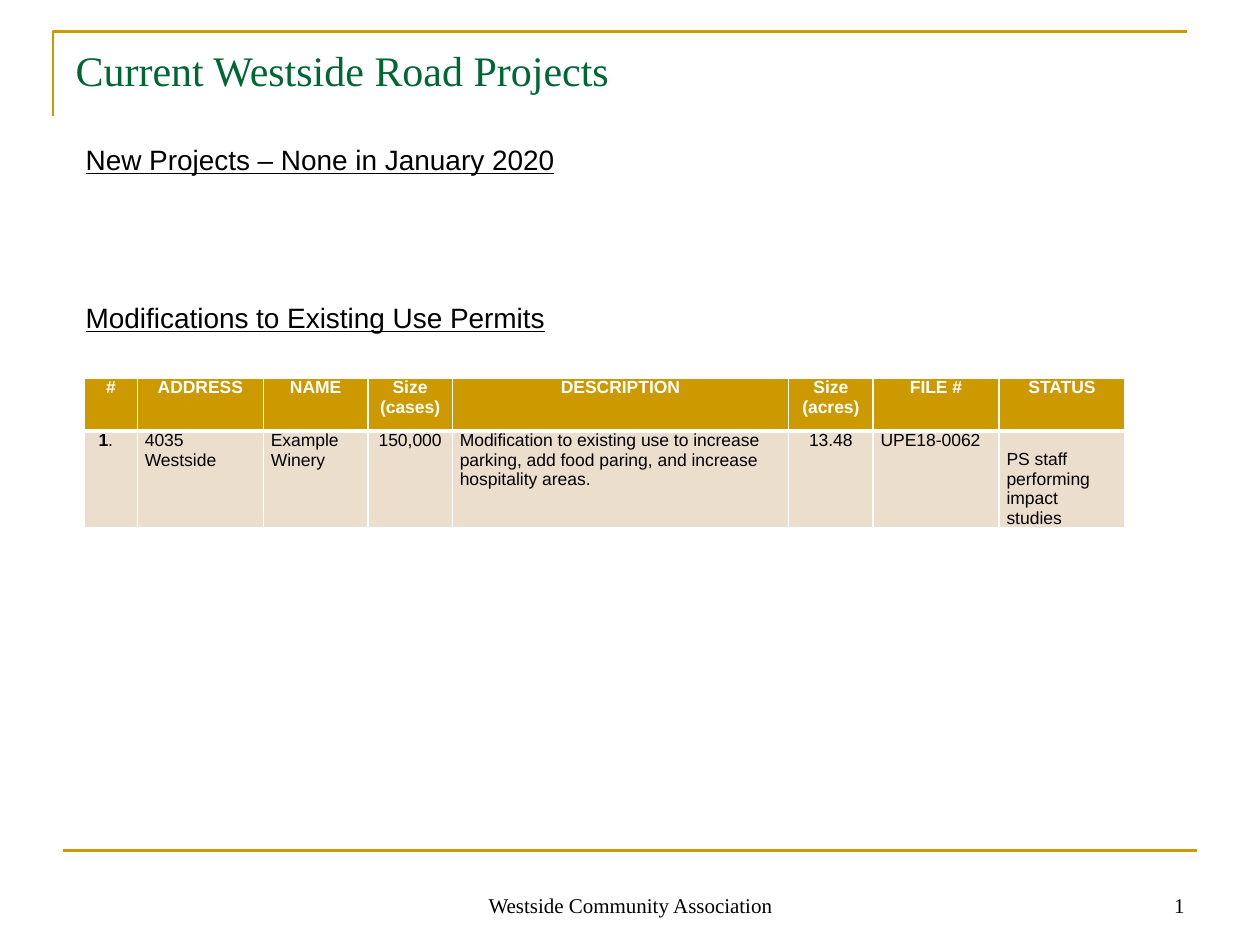
from pptx import Presentation
from pptx.dml.color import RGBColor
from pptx.enum.shapes import MSO_CONNECTOR
from pptx.enum.text import MSO_ANCHOR, MSO_AUTO_SIZE, PP_ALIGN
from pptx.oxml.ns import qn
from pptx.util import Inches, Pt
from lxml import etree

LEFT, MID, RIGHT = PP_ALIGN.LEFT, PP_ALIGN.CENTER, PP_ALIGN.RIGHT
TOP, BASE = MSO_ANCHOR.TOP, MSO_ANCHOR.BOTTOM
GOLD, SAND, GREEN = "CC9900", "ECDECC", "006633"
BLACK, WHITE = "000000", "FFFFFF"
SANS, SERIF = "Arial", "Times New Roman"


def color(code):
    return RGBColor.from_string(code)


def write(frame, text, font=SANS, size=10, tint=BLACK, bold=False,
          line=False, align=LEFT, gap=0, plain=False):
    """Fill a frame, one paragraph a line; a tab parts bold from regular."""
    for i, row in enumerate(text.split("\n")):
        para = frame.paragraphs[0] if i == 0 else frame.add_paragraph()
        if plain:
            props = para._p.get_or_add_pPr()
            props.set("marL", "0")
            props.set("indent", "0")
            etree.SubElement(props, qn("a:buNone"))
        para.alignment = align
        para.space_before = Pt(gap if i else 0)
        parts = row.split("\t")
        for j, part in enumerate(parts):
            run = para.add_run()
            run.text = part
            face = run.font
            face.name, face.size = font, Pt(size)
            face.bold = bold or j < len(parts) - 1
            face.underline = line
            face.color.rgb = color(tint)


def edge(cell, **widths):
    """Draw white cell borders, widths in points by side."""
    props = cell._tc.get_or_add_tcPr()
    for i, side in enumerate(("L", "R", "T", "B")):
        width = Pt(widths.get(side, 1))
        rule = etree.Element(qn("a:ln" + side), w=str(width))
        fill = etree.SubElement(rule, qn("a:solidFill"))
        etree.SubElement(fill, qn("a:srgbClr"), val=WHITE)
        props.insert(i, rule)


class Page:
    def __init__(self, deck):
        self.slide = deck.slides.add_slide(deck.slide_layouts[1])
        self.shapes = self.slide.shapes

    def place(self, shape, box, text, anchor=TOP, **style):
        shape.left, shape.top, shape.width, shape.height = map(Inches, box)
        frame = shape.text_frame
        frame.word_wrap = True
        frame.auto_size = MSO_AUTO_SIZE.NONE
        frame.vertical_anchor = anchor
        write(frame, text, **style)

    def title(self, box, text, **style):
        self.place(self.shapes.title, box, text, **style)

    def body(self, box, text, **style):
        self.place(self.slide.placeholders[1], box, text, plain=True, **style)

    def label(self, box, text, **style):
        shape = self.shapes.add_textbox(*map(Inches, box))
        self.place(shape, box, text, anchor=BASE, **style)

    def stroke(self, shape):
        shape.line.color.rgb = color(GOLD)
        shape.line.width = Pt(1.5)

    def rule(self, x, y, end):
        shape = self.shapes.add_connector(
            MSO_CONNECTOR.STRAIGHT, Inches(x), Inches(y), Inches(end), Inches(y))
        self.stroke(shape)
        etree.SubElement(shape._element.spPr, qn("a:effectLst"))

    def frame(self, first, *rest):
        pen = self.shapes.build_freeform(*map(Inches, first))
        pen.add_line_segments([(Inches(x), Inches(y)) for x, y in rest],
                              close=False)
        shape = pen.convert_to_shape()
        shape.shadow.inherit = False
        shape.fill.background()
        self.stroke(shape)

    def table(self, x, y, cols, highs, rows, aligns):
        grid = self.shapes.add_table(
            len(rows), len(cols), Inches(x), Inches(y),
            Inches(sum(cols)), Inches(sum(highs))).table
        for col, width in zip(grid.columns, cols):
            col.width = Inches(width)
        for r, row in enumerate(rows):
            grid.rows[r].height = Inches(highs[r])
            head = r == 0
            for c, text in enumerate(row):
                cell = grid.cell(r, c)
                cell.margin_left = cell.margin_right = Inches(0.06)
                cell.margin_top = cell.margin_bottom = 0
                cell.fill.solid()
                cell.fill.fore_color.rgb = color(GOLD if head else SAND)
                edge(cell, B=3 if head else 1, T=1 if head else 3)
                write(cell.text_frame, text, bold=head,
                      tint=WHITE if head else BLACK,
                      align=MID if head else aligns[c])
        return grid


def main():
    deck = Presentation()
    deck.slide_width, deck.slide_height = Inches(10), Inches(7.5)
    page = Page(deck)

    # Gold rules
    page.frame((0.42, 0.92), (0.42, 0.25), (9.42, 0.25))
    page.rule(0.5, 6.75, 9.5)

    # Title and headings
    page.title((0.5, 0.3, 9, 1.25), "Current Westside Road Projects",
               font=SERIF, size=24, tint=GREEN)
    page.body((0.58, 1.08, 9, 4.95),
              "New Projects – None in January 2020\n"
              "Modifications to Existing Use Permits",
              size=16, line=True, gap=71)

    # Footer
    page.label((3.42, 6.83, 3.17, 0.5), "Westside Community Association",
               font=SERIF, size=12, align=MID)
    page.label((7.17, 6.83, 2.33, 0.5), "1", font=SERIF, size=12, align=RIGHT)

    # Permit table
    rows = [
        ("#", "ADDRESS", "NAME", "Size\n(cases)", "DESCRIPTION",
         "Size\n(acres)", "FILE #", "STATUS"),
        ("1\t.", "4035\nWestside", "Example Winery", "150,000",
         "Modification to existing use to increase parking, "
         "add food paring, and increase hospitality areas.",
         "13.48", "UPE18-0062", "PS staff performing impact studies"),
    ]
    grid = page.table(0.67, 3, (0.42, 1, 0.83, 0.67, 2.67, 0.67, 1, 1),
                      (0.42, 0.77), rows,
                      (MID, LEFT, LEFT, MID, LEFT, MID, LEFT, LEFT))
    grid.cell(1, 0).margin_right = Inches(0.14)
    grid.cell(1, 7).margin_top = Inches(0.15)

    deck.save("out.pptx")


if __name__ == "__main__":
    main()
